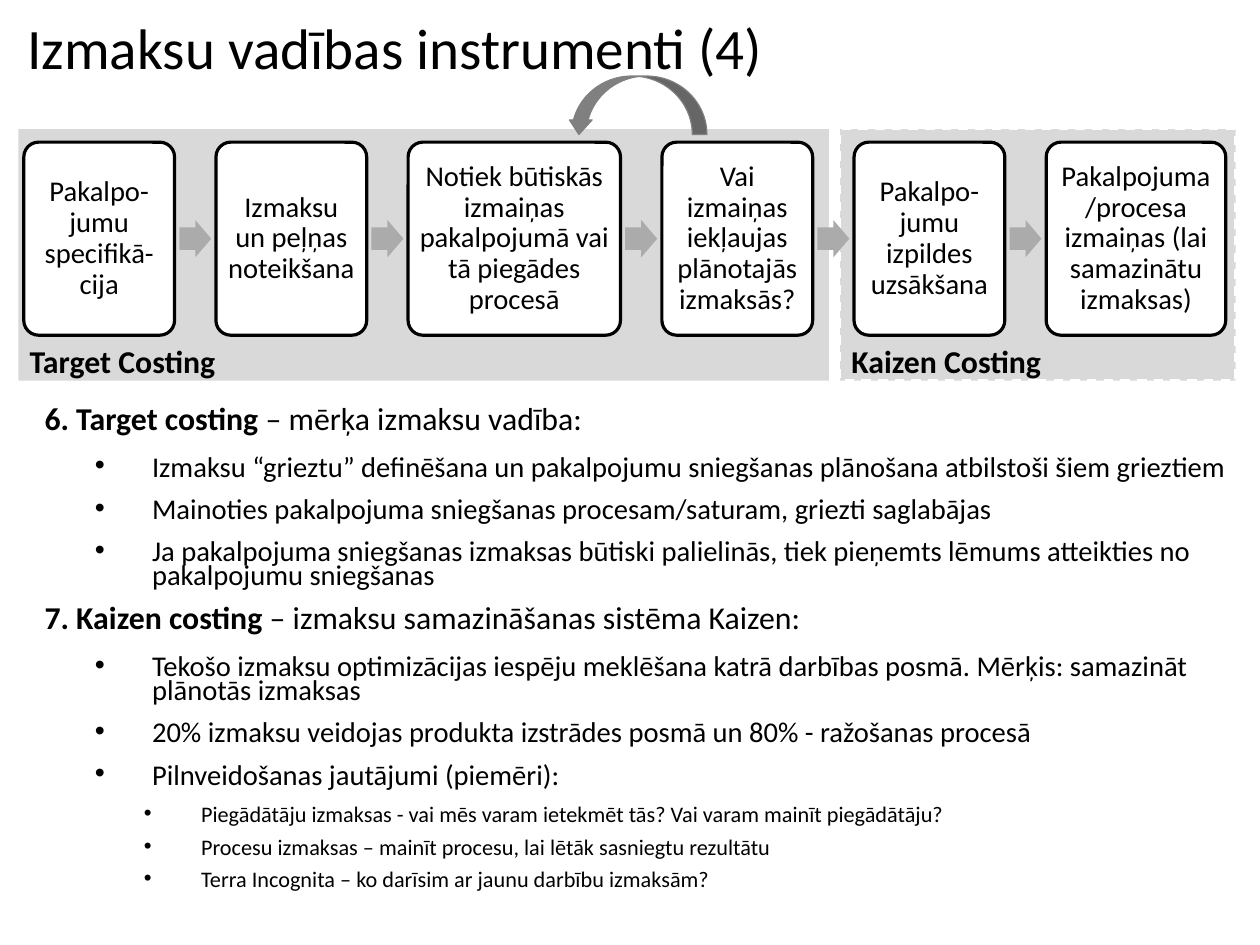
import pptx
import pptx.dml.color
import pptx.enum.dml
import pptx.enum.shapes
import pptx.enum.text
import pptx.oxml
import pptx.oxml.ns
import pptx.util

Cm = pptx.util.Cm
Pt = pptx.util.Pt
SHAPE = pptx.enum.shapes.MSO_SHAPE
ALIGN = pptx.enum.text.PP_ALIGN
ANCHOR = pptx.enum.text.MSO_ANCHOR

STEPS = [
    ("Pakalpo-jumu specifikā-cija", 3.35),
    ("Izmaksu un peļņas noteikšana", 3.35),
    ("Notiek būtiskās izmaiņas pakalpojumā vai tā piegādes procesā", 4.72),
    ("Vai izmaiņas iekļaujas plānotajās izmaksās?", 3.35),
    ("Pakalpo-jumu izpildes uzsākšana", 3.35),
    ("Pakalpojuma/procesa izmaiņas (lai samazinātu izmaksas)", 3.99),
]

# Level, bold lead, plain text
POINTS = [
    (0, "6. Target costing ", "– mērķa izmaksu vadība:"),
    (1, "", "Izmaksu “grieztu” definēšana un pakalpojumu sniegšanas plānošana "
            "atbilstoši šiem grieztiem"),
    (1, "", "Mainoties pakalpojuma sniegšanas procesam/saturam, griezti saglabājas"),
    (1, "", "Ja pakalpojuma sniegšanas izmaksas būtiski palielinās, tiek pieņemts "
            "lēmums atteikties no pakalpojumu sniegšanas"),
    (0, "7. Kaizen costing ", "– izmaksu samazināšanas sistēma Kaizen:"),
    (1, "", "Tekošo izmaksu optimizācijas iespēju meklēšana katrā darbības posmā. "
            "Mērķis: samazināt plānotās izmaksas"),
    (1, "", "20% izmaksu veidojas produkta izstrādes posmā un 80% - ražošanas procesā"),
    (1, "", "Pilnveidošanas jautājumi (piemēri):"),
    (2, "", "Piegādātāju izmaksas - vai mēs varam ietekmēt tās? "
            "Vai varam mainīt piegādātāju?"),
    (2, "", "Procesu izmaksas – mainīt procesu, lai lētāk sasniegtu rezultātu"),
    (2, "", "Terra Incognita – ko darīsim ar jaunu darbību izmaksām?"),
]

# Size, space after and left margin for each level
LEVELS = [(20, 14.2, 0), (18, 11.4, 2.39), (14, 8.5, 3.48)]


def color(code):
    return pptx.dml.color.RGBColor.from_string(code)


def apply(item, **values):
    """Set each named value as an attribute of the item."""
    for name, value in values.items():
        setattr(item, name, value)


def paint(shape, fill, line=None, width=1):
    shape.shadow.inherit = False
    shape.fill.solid()
    shape.fill.fore_color.rgb = color(fill)
    if line:
        shape.line.color.rgb = color(line)
        shape.line.width = Pt(width)
    else:
        shape.line.fill.background()


def draw(slide, kind, box, fill, line=None, width=1):
    shape = slide.shapes.add_shape(kind, *map(Cm, box))
    paint(shape, fill, line, width)
    return shape


def frame(shape, anchor, side=0, edge=0):
    """Wrap the text and set its anchor and margins."""
    text = shape.text_frame
    apply(text, word_wrap=True, vertical_anchor=anchor,
          margin_left=Cm(side), margin_right=Cm(side),
          margin_top=Cm(edge), margin_bottom=Cm(edge))
    return text


def write(para, text, size, bold=False):
    run = para.add_run()
    run.text = text
    apply(run.font, name="Calibri", size=Pt(size), bold=bold)
    run.font.color.rgb = color("000000")


def dot(para, left):
    """Give the paragraph a black bullet with a hanging indent."""
    props = para._p.get_or_add_pPr()
    props.set("marL", str(Cm(left)))
    props.set("indent", str(Cm(-1.27)))
    space = pptx.oxml.ns.nsdecls("a")
    for part in ('<a:buClr {}><a:srgbClr val="000000"/></a:buClr>',
                 '<a:buFont {} typeface="Arial"/>',
                 '<a:buChar {} char="•"/>'):
        props.append(pptx.oxml.parse_xml(part.format(space)))


def panel(slide, box, label, line=None):
    shape = draw(slide, SHAPE.RECTANGLE, box, "D9D9D9", line, 1.5)
    if line:
        shape.line.dash_style = pptx.enum.dml.MSO_LINE.DASH
    para = frame(shape, ANCHOR.BOTTOM, 0.25).paragraphs[0]
    apply(para, alignment=ALIGN.LEFT, line_spacing=0.93)
    write(para, label, 20, True)


def title(slide, box, text):
    shape = slide.shapes.add_textbox(*map(Cm, box))
    para = frame(shape, ANCHOR.MIDDLE).paragraphs[0]
    para.line_spacing = 1.01
    write(para, text, 36)


def body(slide, box, points):
    shape = slide.shapes.add_textbox(*map(Cm, box))
    paint(shape, "FFFFFF")
    text = frame(shape, ANCHOR.TOP)
    for index, (level, lead, rest) in enumerate(points):
        para = text.add_paragraph() if index else text.paragraphs[0]
        size, after, left = LEVELS[level]
        if level:
            dot(para, left)
        apply(para, level=level, line_spacing=0.7, space_after=Pt(after))
        if lead:
            write(para, lead, size, True)
        write(para, rest, size)


def flow(slide, box, steps):
    """Place the steps in a row with an arrow in each gap."""
    left, top, total, high = box
    gap = (total - sum(wide for _, wide in steps)) / (len(steps) - 1)
    long, tall = 0.71, 0.83
    for index, (label, wide) in enumerate(steps):
        card = draw(slide, SHAPE.ROUNDED_RECTANGLE, (left, top, wide, high),
                    "FFFFFF", "000000", 2)
        card.adjustments[0] = 0.33 / min(wide, high)
        para = frame(card, ANCHOR.MIDDLE, 0.15, 0.15).paragraphs[0]
        apply(para, alignment=ALIGN.CENTER, line_spacing=0.9)
        write(para, label, 18)
        left += wide
        if index < len(steps) - 1:
            arrow = draw(slide, SHAPE.RIGHT_ARROW,
                         (left + (gap - long) / 2, top + (high - tall) / 2, long, tall),
                         "ABABAB")
            arrow.adjustments[0] = 0.6
            arrow.adjustments[1] = 0.5
        left += gap


def loop(slide, box):
    """Draw the curved arrow that leads back one step."""
    arrow = draw(slide, SHAPE.CURVED_RIGHT_ARROW, box, "808080", "808080", 0.75)
    arrow.rotation = 90
    for index, value in enumerate((0.25, 0.39, 0.25)):
        arrow.adjustments[index] = value


def main():
    deck = pptx.Presentation()
    apply(deck, slide_width=Cm(28), slide_height=Cm(21))
    slide = deck.slides.add_slide(deck.slide_layouts[6])
    panel(slide, (18.67, 2.87, 8.79, 5.59), "Kaizen Costing", "FFFFFF")
    panel(slide, (0.41, 2.87, 18.01, 5.59), "Target Costing")
    title(slide, (0.61, -0.1, 25.2, 2.26), "Izmaksu vadības instrumenti (4)")
    body(slide, (0.99, 9.09, 26.6, 11.4), POINTS)
    flow(slide, (0.53, 3.16, 26.71, 4.29), STEPS)
    loop(slide, (13.51, 0.79, 1.3, 3.1))
    deck.save("out.pptx")


if __name__ == "__main__":
    main()
